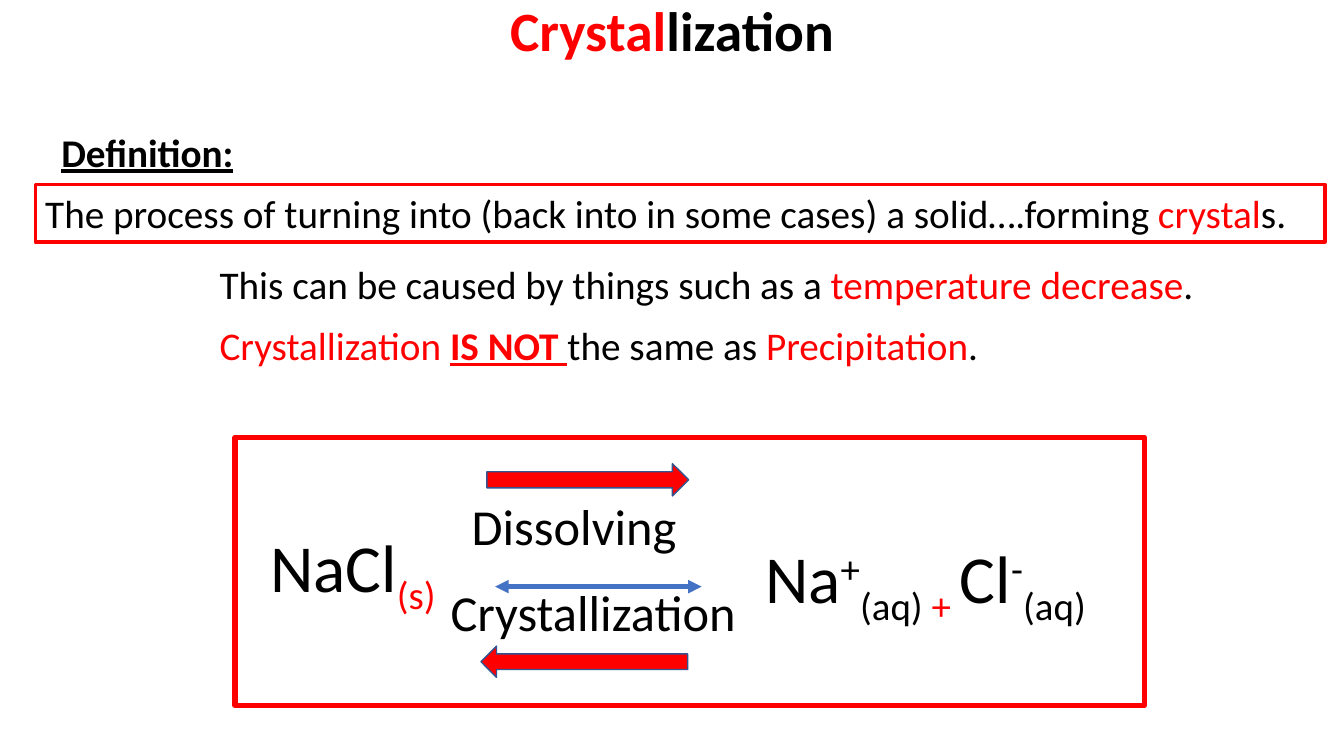
import pptx
import pptx.dml.color
import pptx.enum.shapes
import pptx.enum.text
import pptx.oxml
import pptx.oxml.ns
import pptx.util

Inches = pptx.util.Inches
Shapes = pptx.enum.shapes.MSO_SHAPE
COLORS = {"black": "000000", "red": "FF0000", "blue": "4472C4", "navy": "325491"}
HEADING = {"bold": True, "underline": True}
SUB, SUPER = -25, 30


def color(name):
    return pptx.dml.color.RGBColor.from_string(COLORS[name])


def write(shape, size, spans, bold=False):
    """Fill a shape with one paragraph of (text, colour, baseline, font values)."""
    frame = shape.text_frame
    frame.word_wrap = True
    para = frame.paragraphs[0]
    for text, tint, baseline, values in spans:
        span = para.add_run()
        span.text = text
        span.font.color.rgb = color(tint)
        formats = {"name": "Calibri", "size": pptx.util.Pt(size), "bold": bold, **values}
        for key, value in formats.items():
            setattr(span.font, key, value)
        if baseline:
            span.font._element.set("baseline", str(baseline * 1000))
    return para


deck = pptx.Presentation()
deck.slide_width, deck.slide_height = Inches(13.33), Inches(7.5)
page = deck.slides.add_slide(deck.slide_layouts[5])

# Title
title = page.shapes.title
title.left, title.top, title.width, title.height = map(Inches, (0, 0, 13.33, 0.66))
heading = write(title, 39.6, [("Crystal", "red", 0, {}), ("lization", "black", 0, {})], bold=True)
heading.alignment = pptx.enum.text.PP_ALIGN.CENTER
heading.line_spacing = 0.9
title.text_frame.vertical_anchor = pptx.enum.text.MSO_ANCHOR.MIDDLE
title.text_frame.auto_size = pptx.enum.text.MSO_AUTO_SIZE.NONE

# Definition, notes and equation texts
texts = [
    ((0.51, 1.22, 1.97, 0.57), 28, [("Definition:", "black", 0, HEADING)]),
    ((2.58, 5.16, 2.25, 0.91), 48, [("NaCl", "black", 0, {}), ("(s)", "red", SUB, {})]),
    ((4.58, 4.86, 2.25, 0.71), 36, [("Dissolving", "black", 0, {})]),
    ((4.37, 5.72, 3.12, 0.71), 36, [("Crystallization", "black", 0, {})]),
    ((7.49, 5.27, 3.86, 0.91), 48, [
        ("Na", "black", 0, {}), ("+", "black", SUPER, {}), ("(aq) ", "black", SUB, {}),
        ("+ ", "red", SUB, {}),
        ("Cl", "black", 0, {}), ("-", "black", SUPER, {}), ("(aq)", "black", SUB, {})]),
    ((2.08, 2.53, 10.18, 0.57), 28, [
        ("This can be caused by things such as a ", "black", 0, {}),
        ("temperature decrease", "red", 0, {}), (".", "black", 0, {})]),
    ((2.08, 3.14, 8.52, 0.57), 28, [
        ("Crystallization ", "red", 0, {}), ("IS NOT ", "red", 0, HEADING),
        ("the same as ", "black", 0, {}),
        ("Precipitation", "red", 0, {}), (".", "black", 0, {})]),
]
for place, size, spans in texts:
    write(page.shapes.add_textbox(*map(Inches, place)), size, spans)

# Two-way arrow between the reaction names
both_ways = page.shapes.add_connector(
    pptx.enum.shapes.MSO_CONNECTOR.STRAIGHT, *map(Inches, (4.91, 5.82, 6.96, 5.82)))
both_ways.line.color.rgb = color("blue")
both_ways.line.width = pptx.util.Pt(3.25)
stroke = both_ways.line._get_or_add_ln()
for end in ("headEnd", "tailEnd"):
    pptx.oxml.ns.qn("a:ln")
    stroke.append(pptx.oxml.parse_xml(
        f'<a:{end} {pptx.oxml.ns.nsdecls("a")} type="triangle"/>'))
both_ways._element.spPr.append(
    pptx.oxml.parse_xml(f'<a:effectLst {pptx.oxml.ns.nsdecls("a")}/>'))

# Block arrows and red frames
blocks = [
    (Shapes.RIGHT_ARROW, (4.83, 4.6, 2, 0.32), "red", "navy", 1, []),
    (Shapes.LEFT_ARROW, (4.77, 6.41, 2.05, 0.31), "red", "navy", 1, []),
    (Shapes.RECTANGLE, (2.33, 4.34, 9.02, 2.66), None, "red", 3.75, []),
    (Shapes.RECTANGLE, (0.35, 1.83, 12.79, 0.57), None, "red", 2.5, [
        ("The process of turning into (back into in some cases) a solid….forming ",
         "black", 0, {}),
        ("crystal", "red", 0, {}), ("s.", "black", 0, {})]),
]
for kind, place, fill, outline, width, spans in blocks:
    block = page.shapes.add_shape(kind, *map(Inches, place))
    block.shadow.inherit = False
    if fill:
        block.fill.solid()
        block.fill.fore_color.rgb = color(fill)
    else:
        block.fill.background()
    block.line.color.rgb = color(outline)
    block.line.width = pptx.util.Pt(width)
    if spans:
        write(block, 28, spans).alignment = pptx.enum.text.PP_ALIGN.LEFT
        block.text_frame.vertical_anchor = pptx.enum.text.MSO_ANCHOR.TOP

deck.save("out.pptx")
